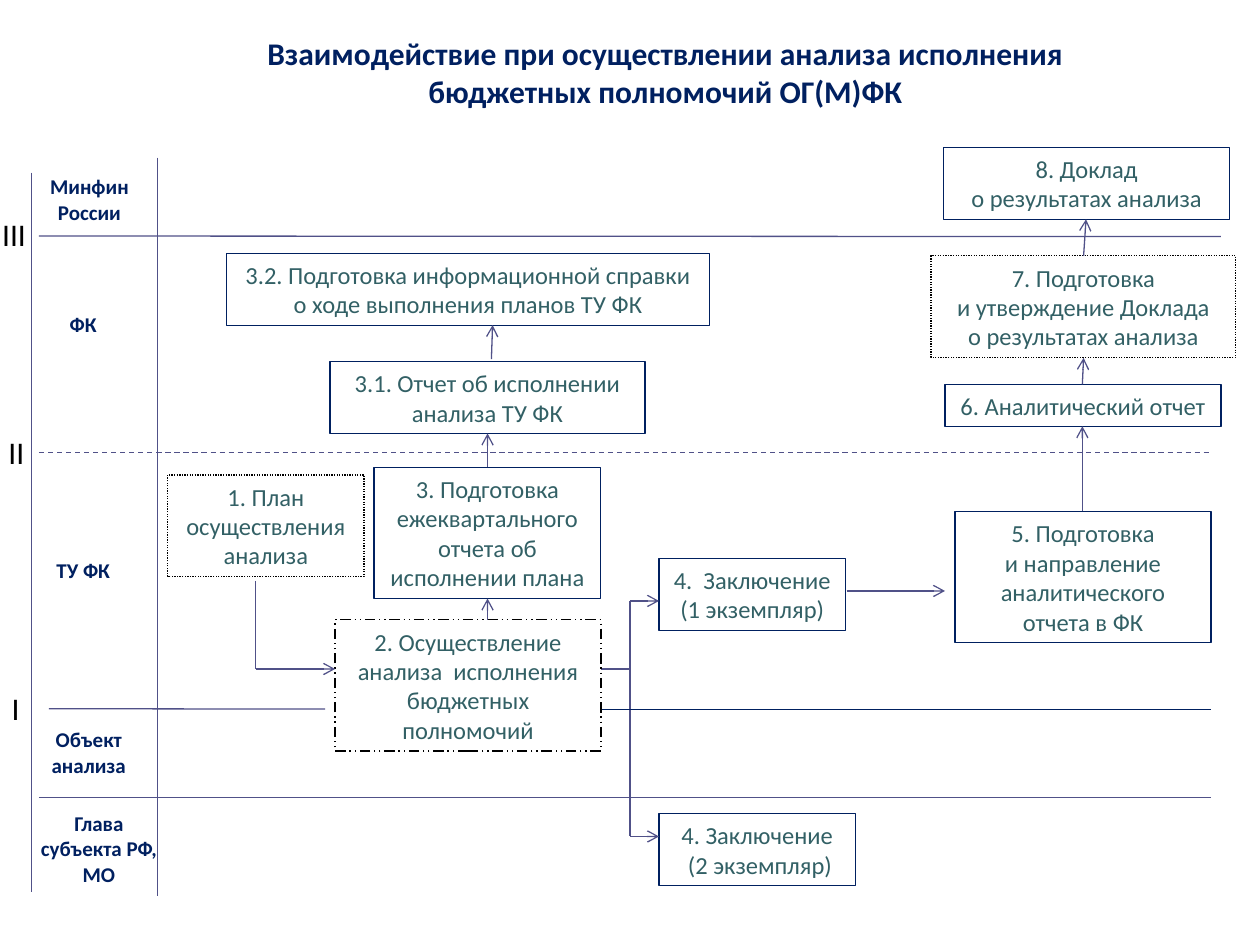
from copy import deepcopy

from pptx import Presentation
from pptx.dml.color import RGBColor
from pptx.enum.dml import MSO_LINE
from pptx.enum.shapes import MSO_CONNECTOR, MSO_SHAPE
from pptx.enum.text import MSO_ANCHOR, PP_ALIGN
from pptx.oxml.ns import qn
from pptx.util import Pt

COLORS = {"navy": "002060", "teal": "326065", "violet": "505188", "black": "000000"}

# Font formats by role; every length in the script is in points
TITLE = {"name": "Calibri", "size": Pt(18), "bold": True}
LANE = {"name": "Calibri", "size": Pt(12), "bold": True}
STEP = {"name": "Calibri", "size": Pt(14), "bold": False}
NUMERAL = {"name": "Calibri", "size": Pt(18), "bold": False}

LANE_END = 692
SPLIT_X = 360  # where the two conclusions part
STEP_X = 376.6

# Text, left, top, width, height
LANES = [
    ("Минфин России", 14.4, 95.8, 73.4, 36),
    ("ФК", 16.6, 174.2, 61.9, 21.8),
    ("ТУ ФК", 16.6, 314.6, 61.9, 21.8),
    ("Объект анализа", 11.5, 410.4, 78.5, 38.9),
    ("Глава\vсубъекта РФ, МО", 11.5, 459.4, 90, 51),
]
NUMERALS = [("III", -5.8, 119.5, 31), ("II", -2.2, 244, 31), ("I", 2.2, 390.2, 11.5)]

# Text, left, top, width, number of lines
STEPS = [
    ("3. Подготовка ежеквартального отчета об исполнении плана", 213.8, 267, 129.6, 4),
    ("3.1. Отчет об исполнении анализа ТУ ФК", 188.6, 206.6, 180, 2),
    ("3.2. Подготовка информационной справки о ходе выполнения планов ТУ ФК",
     129.6, 144.7, 275.8, 2),
    ("4.  Заключение (1 экземпляр)", STEP_X, 319, 106.6, 2),
    ("4. Заключение\v (2 экземпляр)", STEP_X, 465, 112.3, 2),
    ("5. Подготовка\vи направление аналитического отчета в ФК", 545.8, 292.3, 146.2, 4),
    ("6. Аналитический отчет", 540, 219.6, 157.7, 1),
    ("8. Доклад\nо результатах анализа", 539.3, 84.2, 163.4, 2),
]
DASHED_STEPS = [
    ("1. План осуществления анализа", 95.8, 271.4, 112.3, 3, MSO_LINE.ROUND_DOT),
    ("2. Осуществление анализа  исполнения бюджетных полномочий",
     191.5, 354.2, 152, 4, MSO_LINE.DASH_DOT_DOT),
    ("7. Подготовка\vи утверждение Доклада\vо результатах анализа",
     532, 146.2, 174.2, 3, MSO_LINE.ROUND_DOT),
]

# Start x, start y, end x, end y
PLAIN_LINES = [
    (18, 98.6, 18, 509.8),
    (90, 90, 90, 512),
    (22.3, 134.9, 697.7, 135.2),
    (28, 405, 185.8, 405.2),
    (22.3, 455.8, LANE_END, 455.8),
    (146.2, 332, 146.2, 382.3),
    (343.4, 382.3, SPLIT_X, 382.3),
    (SPLIT_X, 343.4, SPLIT_X, 478),
]
ARROWS = [
    (146.2, 382.3, 191.5, 382.3),
    (SPLIT_X, 343.4, STEP_X, 343.4),
    (SPLIT_X, 478, STEP_X, 478),
    (483.8, 337.7, 540, 337.7),
    (278.6, 354.2, 278.6, 342),
    (278.6, 267, 278.6, 247.7),
    (280.8, 205.2, 281.5, 185.8),
    (618.5, 292.3, 618.5, 243.6),
    (618.5, 219.6, 619.2, 204.5),
    (619.2, 146.2, 620.6, 125.3),
]


def rgb(color):
    return RGBColor.from_string(COLORS[color])


def write_text(box, text, font_format, color, align=PP_ALIGN.CENTER, wrap=True):
    frame = box.text_frame
    frame.text = text
    frame.word_wrap = wrap
    frame.vertical_anchor = MSO_ANCHOR.MIDDLE
    for para in frame.paragraphs:
        para.alignment = align
        for span in para.runs:
            for name, value in font_format.items():
                setattr(span.font, name, value)
            span.font.color.rgb = rgb(color)
        # Line breaks take the size of the text around them
        for line_break in para._p.findall(qn("a:br")):
            line_break.insert(0, deepcopy(para.runs[0]._r.rPr))


def add_title(page, text):
    title = page.shapes.title
    place = {"left": Pt(144.7), "top": Pt(15.8), "width": Pt(471), "height": Pt(51)}
    for name, value in place.items():
        setattr(title, name, value)
    write_text(title, text, TITLE, "navy")


def add_label(page, text, left, top, width, height, font_format, color, **options):
    box = page.shapes.add_textbox(Pt(left), Pt(top), Pt(width), Pt(height))
    write_text(box, text, font_format, color, **options)


def add_step(page, text, left, top, width, lines, dash=None):
    height = 7.4 + 16.9 * lines
    box = page.shapes.add_shape(
        MSO_SHAPE.RECTANGLE, Pt(left), Pt(top), Pt(width), Pt(height))
    box.shadow.inherit = False
    box.fill.background()
    box.line.width = Pt(0.75)
    box.line.color.rgb = rgb("black" if dash else "navy")
    if dash:
        box.line.dash_style = dash
    write_text(box, text, STEP, "teal")


def add_line(page, ends, color="violet", width=0.75, dash=None, arrow=False):
    line = page.shapes.add_connector(MSO_CONNECTOR.STRAIGHT, *map(Pt, ends))
    line.line.color.rgb = rgb(color)
    line.line.width = Pt(width)
    if dash:
        line.line.dash_style = dash
    properties = line._element.spPr
    if arrow:
        outline = properties.find(qn("a:ln"))
        head = outline.makeelement(qn("a:tailEnd"), {"type": "arrow"})
        outline.append(head)
    properties.append(properties.makeelement(qn("a:effectLst"), {}))


def main():
    deck = Presentation()
    deck.slide_width, deck.slide_height = Pt(720), Pt(540)
    page = deck.slides.add_slide(deck.slide_layouts[5])
    add_title(page, "Взаимодействие при осуществлении анализа исполнения "
                    "бюджетных полномочий ОГ(М)ФК")

    # Lane borders
    for ends in PLAIN_LINES:
        add_line(page, ends)
    add_line(page, (22.3, 258.5, LANE_END, 258.5), dash=MSO_LINE.DASH)
    add_line(page, (343.4, 405.4, LANE_END, 405.4), color="navy", width=1)

    # Lane names and level numerals
    for lane in LANES:
        add_label(page, *lane, LANE, "navy")
    for text, left, top, width in NUMERALS:
        add_label(page, text, left, top, width, 28.8, NUMERAL, "black",
                  align=PP_ALIGN.LEFT, wrap=False)

    # Process steps and the flow between them
    for step in STEPS + DASHED_STEPS:
        add_step(page, *step)
    for ends in ARROWS:
        add_line(page, ends, arrow=True)

    deck.save("out.pptx")


if __name__ == "__main__":
    main()
